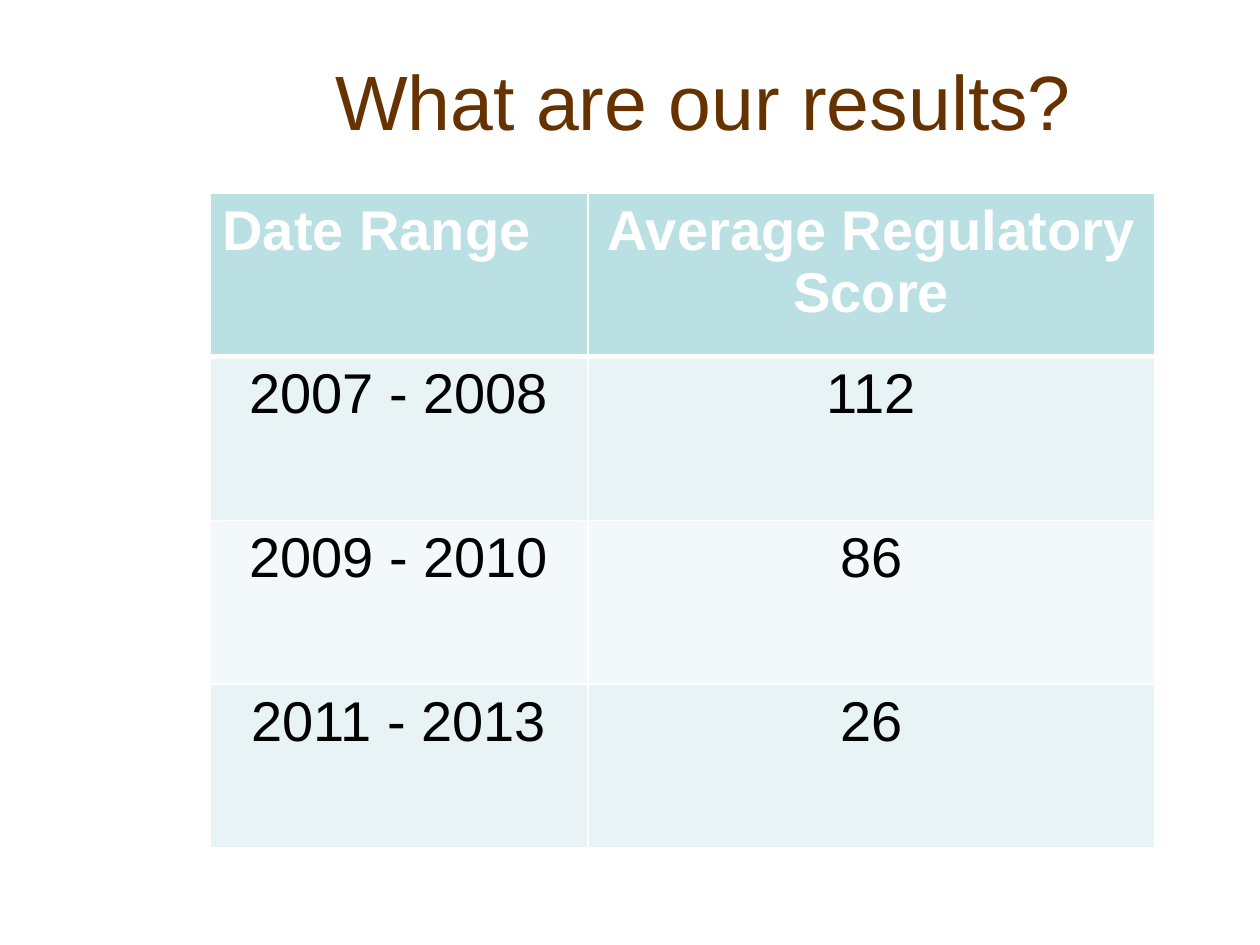
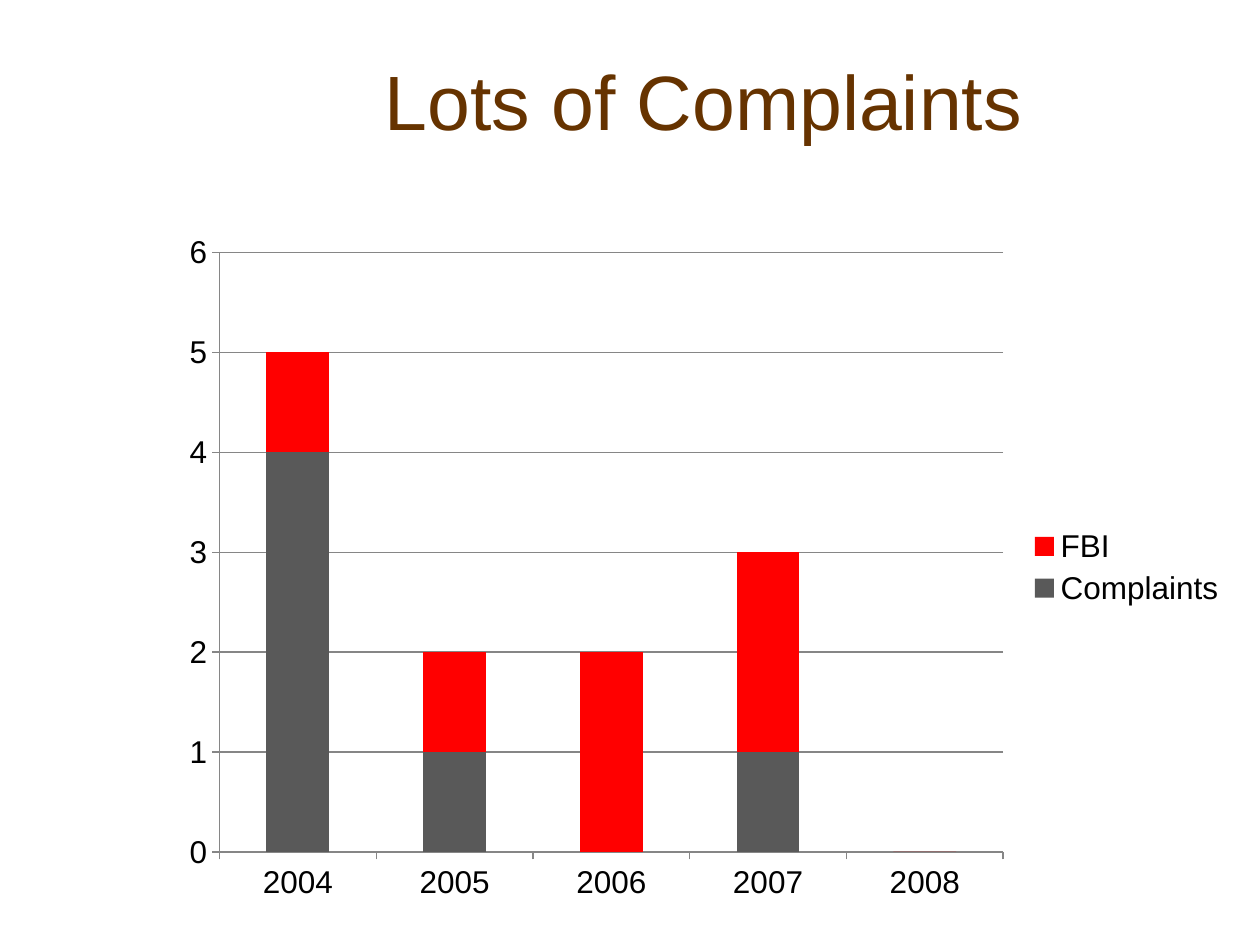
from dataclasses import dataclass

from lxml import etree
from pptx import Presentation
from pptx import util as u
from pptx.chart.data import CategoryChartData
from pptx.dml.color import RGBColor
from pptx.enum import chart as charts, text
from pptx.oxml.ns import qn

FONT = "Arial"
WHITE = RGBColor(0xFF, 0xFF, 0xFF)
BLACK = RGBColor(0, 0, 0)
BROWN = RGBColor(0x66, 0x33, 0x00)
TEAL = RGBColor(0xBB, 0xE0, 0xE3)
BANDS = (RGBColor(0xE7, 0xF3, 0xF4), RGBColor(0xF3, 0xF9, 0xFA))
GRAY = RGBColor(0x59, 0x59, 0x59)
RED = RGBColor(0xFF, 0, 0)
AXIS_GRAY = RGBColor(0x86, 0x86, 0x86)
CENTER = text.PP_ALIGN.CENTER


@dataclass(frozen=True)
class Series:
    name: str
    values: tuple[int, ...]
    color: RGBColor


@dataclass(frozen=True)
class CellStyle:
    fill: RGBColor
    color: RGBColor
    bold: bool
    bottom_border: float
    align: text.PP_ALIGN


RESULTS = (
    ("Date Range", "Average Regulatory Score"),
    ("2007 - 2008", "112"),
    ("2009 - 2010", "86"),
    ("2011 - 2013", "26"),
)
COLUMN_WIDTHS = (u.Cm(7.62), u.Cm(11.43))
ROW_HEIGHT = u.Cm(3.3)
YEARS = ("2004", "2005", "2006", "2007", "2008")
COMPLAINT_SERIES = (
    Series("Complaints", (4, 1, 0, 1, 0), GRAY),
    Series("FBI", (1, 1, 2, 2, 0), RED),
)


def write(frame, content: str, size: int, color: RGBColor,
          align: text.PP_ALIGN, bold: bool = False) -> None:
    para = frame.paragraphs[0]
    para.alignment = align
    span = para.add_run()
    span.text = content
    span.font.name = FONT
    span.font.size = u.Pt(size)
    span.font.bold = bold
    span.font.color.rgb = color


def add_titled_page(deck, title: str):
    page = deck.slides.add_slide(deck.slide_layouts[5])
    page.background.fill.solid()
    page.background.fill.fore_color.rgb = WHITE
    box = page.shapes.title
    box.left, box.top = u.Cm(3.39), u.Cm(0.42)
    box.width, box.height = u.Cm(21.59), u.Cm(3.18)
    box.text_frame.word_wrap = True
    box.text_frame.vertical_anchor = text.MSO_ANCHOR.MIDDLE
    write(box.text_frame, title, 44, BROWN, CENTER)
    return page


def set_borders(cell, bottom: float) -> None:
    properties = cell._tc.get_or_add_tcPr()
    widths = {"a:lnL": 1, "a:lnR": 1, "a:lnT": 1, "a:lnB": bottom}
    for index, (tag, width) in enumerate(widths.items()):
        line = etree.Element(qn(tag), w=str(u.Pt(width)))
        fill = etree.SubElement(line, qn("a:solidFill"))
        etree.SubElement(fill, qn("a:srgbClr"), val=str(WHITE))
        properties.insert(index, line)


def style_for(row: int, column: int) -> CellStyle:
    if row == 0:
        align = text.PP_ALIGN.LEFT if column == 0 else CENTER
        return CellStyle(TEAL, WHITE, True, 3, align)
    return CellStyle(BANDS[(row - 1) % 2], BLACK, False, 1, CENTER)


def add_results_table(page) -> None:
    table = page.shapes.add_table(
        len(RESULTS), len(COLUMN_WIDTHS), u.Cm(4.23), u.Cm(3.89),
        sum(COLUMN_WIDTHS), ROW_HEIGHT * len(RESULTS)).table
    for column, width in zip(table.columns, COLUMN_WIDTHS):
        column.width = width
    for row, entries in enumerate(RESULTS):
        table.rows[row].height = ROW_HEIGHT
        for column, entry in enumerate(entries):
            cell = table.cell(row, column)
            style = style_for(row, column)
            cell.fill.solid()
            cell.fill.fore_color.rgb = style.fill
            set_borders(cell, style.bottom_border)
            write(cell.text_frame, entry, 32, style.color, style.align, style.bold)


def add_complaints_chart(page) -> None:
    data = CategoryChartData(number_format="General")
    data.categories = YEARS
    for series in COMPLAINT_SERIES:
        data.add_series(series.name, series.values)
    chart = page.shapes.add_chart(
        charts.XL_CHART_TYPE.COLUMN_STACKED, u.Cm(3.39), u.Cm(4.45),
        u.Cm(21.59), u.Cm(13.97), data).chart
    chart.font.name = FONT
    chart.font.size = u.Pt(18)
    chart.font.color.rgb = BLACK
    chart.has_title = False
    chart.has_legend = True
    chart.legend.position = charts.XL_LEGEND_POSITION.RIGHT
    chart.legend.include_in_layout = False

    plot = chart.plots[0]
    plot.gap_width, plot.overlap = 150, 100
    plot.vary_by_categories = False
    for bars, series in zip(plot.series, COMPLAINT_SERIES):
        bars.format.fill.solid()
        bars.format.fill.fore_color.rgb = series.color

    for axis in (chart.category_axis, chart.value_axis):
        axis.major_tick_mark = charts.XL_TICK_MARK.OUTSIDE
        axis.minor_tick_mark = charts.XL_TICK_MARK.NONE
        axis.format.line.color.rgb = AXIS_GRAY
    chart.category_axis.has_major_gridlines = False
    values = chart.value_axis
    values.minimum_scale, values.maximum_scale, values.major_unit = 0, 6, 1
    values.has_major_gridlines = True
    values.major_gridlines.format.line.color.rgb = AXIS_GRAY


def main() -> None:
    deck = Presentation()
    deck.slide_width, deck.slide_height = u.Cm(25.4), u.Cm(19.05)
    add_results_table(add_titled_page(deck, "What are our results?"))
    add_complaints_chart(add_titled_page(deck, "Lots of Complaints"))
    deck.save("out.pptx")


if __name__ == "__main__":
    main()
